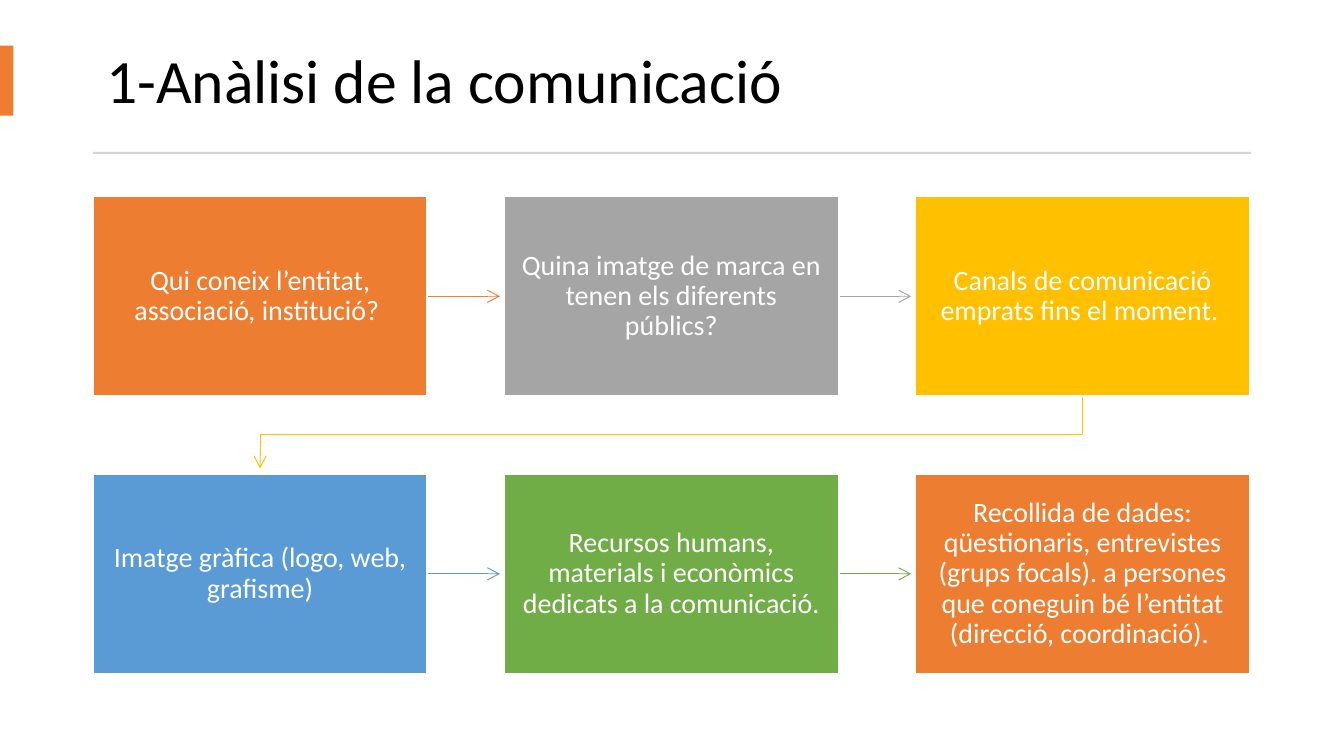
from pptx import Presentation
from pptx.dml.color import RGBColor
from pptx.enum.shapes import MSO_CONNECTOR, MSO_SHAPE
from pptx.enum.text import MSO_ANCHOR, MSO_AUTO_SIZE, PP_ALIGN
from pptx.oxml.ns import qn
from pptx.util import Emu, Pt
from lxml.etree import SubElement

PX = 4572  # 200 px to the inch
FONT = "Calibri"
COLUMNS = 3
BOX_W, BOX_H = 498, 298
STEPS = [
    ("Qui coneix l’entitat, associació, institució? ", "ED7D31"),
    ("Quina imatge de marca en tenen els diferents públics?", "A5A5A5"),
    ("Canals de comunicació emprats fins el moment. ", "FFC000"),
    ("Imatge gràfica (logo, web, grafisme)", "5B9BD5"),
    ("Recursos humans, materials i econòmics dedicats a la comunicació.", "70AD47"),
    ("Recollida de dades: qüestionaris, entrevistes (grups focals). a persones "
     "que coneguin bé l’entitat (direcció, coordinació). ", "ED7D31"),
]


def px(n):
    return Emu(n * PX)


def rgb(color):
    return RGBColor.from_string(color)


def add_text(tf, text, size, color, align):
    tf.word_wrap = True
    tf.auto_size = MSO_AUTO_SIZE.NONE
    tf.vertical_anchor = MSO_ANCHOR.MIDDLE
    p = tf.paragraphs[0]
    p.alignment = align
    p.line_spacing = 0.9
    r = p.add_run()
    r.text = text
    r.font.name = FONT
    r.font.size = Pt(size)
    r.font.color.rgb = rgb(color)


def add_rect(s, x, y, w, h, fill):
    sp = s.shapes.add_shape(MSO_SHAPE.RECTANGLE, px(x), px(y), px(w), px(h))
    sp.shadow.inherit = False
    sp.fill.solid()
    sp.fill.fore_color.rgb = rgb(fill)
    sp.line.fill.background()
    return sp


def add_arrow(s, points, color):
    """Draw a straight connector, or an open outline when the route bends."""
    (x1, y1), *rest = points
    if len(rest) == 1:
        x2, y2 = rest[0]
        sp = s.shapes.add_connector(MSO_CONNECTOR.STRAIGHT, px(x1), px(y1), px(x2), px(y2))
    else:
        builder = s.shapes.build_freeform(x1, y1, scale=PX)
        builder.add_line_segments(rest, close=False)
        sp = builder.convert_to_shape()
        sp.fill.background()
    sp.line.color.rgb = rgb(color)
    sp.line.width = Pt(0.5)
    SubElement(sp.line._get_or_add_ln(), qn("a:tailEnd"), type="arrow")
    SubElement(sp._element.spPr, qn("a:effectLst"))


def add_header(s, x, y, w, h):
    title = s.shapes.title
    title.left, title.top, title.width, title.height = px(x), px(y), px(w), px(h)
    add_text(title.text_frame, "1-Anàlisi de la comunicació", 33, "000000", PP_ALIGN.LEFT)
    add_rect(s, 0, y + 26, 20, 104, "ED7D31")
    add_rect(s, x, y + h + 18, w, 3, "D5D5D5")


def add_step(s, x, y, text, color):
    sp = add_rect(s, x, y, BOX_W, BOX_H, color)
    sp.line.color.rgb = rgb("FFFFFF")
    sp.line.width = Pt(1)
    tf = sp.text_frame
    tf.margin_left = tf.margin_right = px(24)
    tf.margin_top = tf.margin_bottom = px(26)
    add_text(tf, text, 15, "FFFFFF", PP_ALIGN.CENTER)


def add_flow(s, x, y, w, h):
    step_x = (w - BOX_W) // (COLUMNS - 1)
    step_y = h - BOX_H
    places = [(x + i % COLUMNS * step_x, y + i // COLUMNS * step_y)
              for i in range(len(STEPS))]
    for (x1, y1), (x2, y2), (_, color) in zip(places, places[1:], STEPS):
        if y1 == y2:
            middle = y1 + BOX_H // 2
            points = [(x1 + BOX_W, middle), (x2 - 6, middle)]
        else:
            start, end = x1 + BOX_W // 2, x2 + BOX_W // 2
            bend = (y1 + BOX_H + y2) // 2
            points = [(start, y1 + BOX_H), (start, bend), (end, bend), (end, y2 - 8)]
        add_arrow(s, points, color)
    for (left, top), (text, color) in zip(places, STEPS):
        add_step(s, left, top, text, color)


def main():
    prs = Presentation()
    prs.slide_width, prs.slide_height = px(2000), px(1125)
    s = prs.slides.add_slide(prs.slide_layouts[5])
    add_header(s, 138, 42, 1724, 166)
    add_flow(s, 138, 292, 1722, 711)
    prs.save("out.pptx")


if __name__ == "__main__":
    main()
